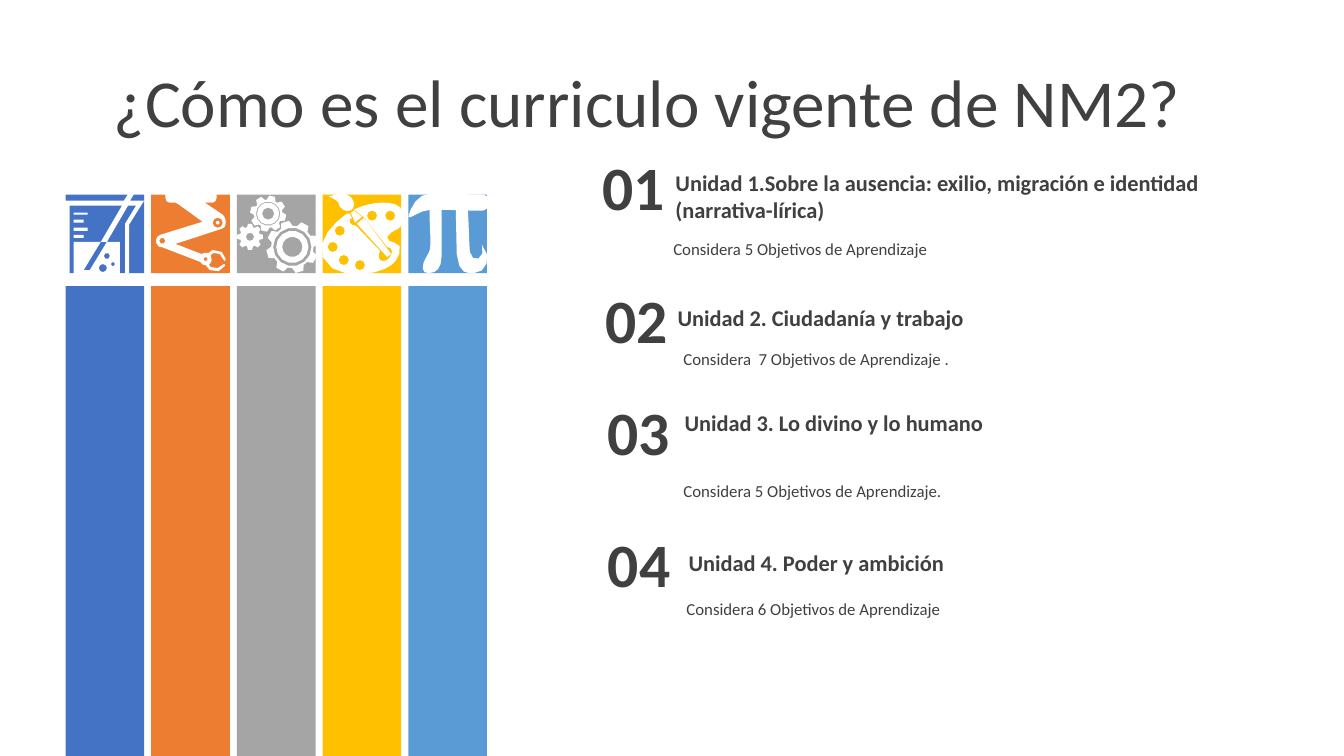
import math
import pptx
import pptx.util
import pptx.dml.color
import pptx.enum.shapes
import pptx.enum.text

PX = 9144  # EMU in one px: 100 px to the inch
FONT = "Calibri"
HUES = {"blue": "4472C4", "orange": "ED7D31", "gray": "A5A5A5",
        "gold": "FFC000", "sky": "5B9BD5", "white": "FFFFFF", "ink": "404040"}
BARS = ["blue", "orange", "gray", "gold", "sky"]

# Number, heading and note of each unit, each with its box in px
UNITS = [
    (("01", (576, 143, 105, 105)),
     ("Unidad 1.Sobre la ausencia: exilio, migración e identidad (narrativa-lírica)",
      (658, 163, 567, 64)),
     ("Considera 5 Objetivos de Aprendizaje", (658, 232, 480, 30))),
    (("02", (579, 275, 105, 84)),
     ("Unidad 2. Ciudadanía y trabajo", (660, 297, 575, 37)),
     ("Considera  7 Objetivos de Aprendizaje .", (668, 341, 493, 30))),
    (("03", (581, 386, 105, 84)),
     ("Unidad 3. Lo divino y lo humano", (667, 401, 558, 37)),
     ("Considera 5 Objetivos de Aprendizaje.", (668, 472, 493, 30))),
    (("04", (581, 517, 106, 84)),
     ("Unidad 4. Poder y ambición", (671, 540, 585, 37)),
     ("Considera 6 Objetivos de Aprendizaje", (671, 589, 493, 30))),
]

# Icon outlines in px: M starts a loop, L draws lines, C draws curves
BEAKER = """M 73 240 L 100 240 83 268 89 268 106 240 119 240 119 273 73 273
M 73 233 L 83 233 83 236 73 236 M 73 226 L 87 226 87 229 73 229
M 73 218 L 83 218 83 221 73 221 M 73 211 L 87 211 87 213 73 213
M 113 204 L 69 204 69 277 124 277 124 222 135 204 127 204 106 240 100 240 121 204
M 137 176 L 143 176 129 199 143 199 128 223 128 282 64 282 64 199 123 199"""
ARM = """M 173 192 L 215 192 215 196 C 215 199 213 201 211 201 L 203 201 221 213
C 224 216 225 221 223 225 222 226 221 226 220 227 L 174 242 200 252 202 251
C 203 251 204 251 205 251 L 207 251 211 248 220 250 224 257 223 259 222 258 218 252
212 251 209 253 210 258 C 210 259 209 261 208 262 L 207 262 209 265 216 266 222 262
223 262 223 264 217 269 208 268 204 263 203 263 C 201 263 200 262 199 260
L 160 245 158 245 C 157 244 156 243 155 241 154 237 156 234 159 233
L 201 220 176 202 174 201 168 201 C 166 201 164 199 164 196 L 164 192"""
PALETTE = """M 361 216 L 388 252 384 255 354 222 M 351 209 L 359 215 352 221 348 211
M 380 201 C 389 201 397 203 400 210 408 228 385 228 384 235 382 243 402 237 396 252
392 262 386 266 372 270 359 274 328 275 320 255 314 238 331 221 344 212
L 347 212 349 216 C 347 217 346 219 347 221 348 223 351 224 353 224 L 354 225 377 249
C 375 252 375 256 377 258 379 260 384 259 386 256 389 253 390 248 387 246
386 245 385 245 384 245 L 363 218 363 217 351 208 C 359 204 370 201 380 201
M 339 192 C 341 192 342 192 343 193 348 194 351 199 351 202 351 206 350 208 347 209
344 210 340 209 337 205 335 199 335 199 326 195 333 193 337 192 339 192"""
PI_TOP = """M 484 198 L 484 204 C 484 206 482 209 479 209 455 209 449 208 428 208
416 208 405 219 405 215 407 206 414 192 427 192 L 479 193 C 482 193 484 195 484 198"""
PI_LEFT = """M 425 271 C 420 271 418 268 420 261 423 253 427 251 427 242
427 231 426 223 426 207 L 438 207 438 254 C 438 266 433 271 425 271"""
PI_RIGHT = """M 470 271 C 464 271 455 273 453 252 L 452 207 464 207
C 465 221 465 236 466 250 468 263 483 256 478 243 489 255 482 271 470 271"""

# Paint wells, arm joints and drops as centre and radius
WELLS = [(357, 263), (341, 258), (330, 245), (337, 229), (369, 214), (387, 214)]
JOINTS = [(204, 257, 2), (161, 239, 3), (216, 221, 2), (216, 221, 5)]
DROPS = [(102, 266, 4), (112, 262, 2), (106, 254, 3)]
# Gears: centre, tip radius, root radius, half tooth, first angle, ring radii
GEARS = [(290, 245, 26, 21, 4, 164, (10, 16, 19)),
         (266, 212, 18, 14, 3, 148, (6, 11, 12)),
         (248, 235, 13, 10, 2, 180, (4,))]


def tint(hue):
    return pptx.dml.color.RGBColor.from_string(HUES[hue])


def paint(shape, hue):
    shape.shadow.inherit = False
    shape.fill.solid()
    shape.fill.fore_color.rgb = tint(hue)
    shape.line.fill.background()


def write(shape, text, size, bold=False, align="LEFT", anchor="TOP", pad=10):
    frame = shape.text_frame
    frame.word_wrap = True
    frame.auto_size = pptx.enum.text.MSO_AUTO_SIZE.NONE
    frame.vertical_anchor = getattr(pptx.enum.text.MSO_ANCHOR, anchor)
    frame.margin_left = frame.margin_right = pad * PX
    frame.margin_top = frame.margin_bottom = 5 * PX
    para = frame.paragraphs[0]
    para.alignment = getattr(pptx.enum.text.PP_ALIGN, align)
    run = para.add_run()
    run.text = text
    run.font.name = FONT
    run.font.size = pptx.util.Pt(size)
    run.font.bold = bold
    run.font.color.rgb = tint("ink")


def label(slide, box, text, size, **look):
    write(slide.shapes.add_textbox(*(n * PX for n in box)), text, size, **look)


def block(slide, box, hue):
    kind = pptx.enum.shapes.MSO_SHAPE.RECTANGLE
    paint(slide.shapes.add_shape(kind, *(n * PX for n in box)), hue)


def curve(ends):
    """Points of a cubic curve after its first end, more on a longer one."""
    steps = min(4, 1 + int(math.dist(ends[0], ends[3]) / 4))
    for step in range(1, steps + 1):
        t = step / steps
        part = [(1 - t) ** 3, 3 * t * (1 - t) ** 2, 3 * t * t * (1 - t), t ** 3]
        yield tuple(sum(w * p[axis] for w, p in zip(part, ends)) for axis in (0, 1))


def trace(text):
    """Turn an outline text into loops of points."""
    loops, mode, nums, ends = [], "M", [], []
    for word in text.split():
        if word in "MLC":
            mode = word
            continue
        nums.append(int(word))
        if len(nums) < 2:
            continue
        spot, nums = tuple(nums), []
        if mode == "M":
            loops.append([spot])
        elif mode == "L":
            loops[-1].append(spot)
        else:
            ends.append(spot)
            if len(ends) == 3:
                loops[-1].extend(curve([loops[-1][-1]] + ends))
                ends = []
    return loops


def polar(x, y, far, turn):
    return x + far * math.cos(turn), y + far * math.sin(turn)


def ring(x, y, far):
    count = 6 if far < 4 else 8 if far < 9 else 14
    return [polar(x, y, far, math.tau * i / count) for i in range(count)]


def gear(x, y, tip, root, half, first, rings):
    rim = []
    for tooth in range(8):
        mid = math.radians(first + 45 * tooth)
        for far, wide in ((root, -1.5 * half), (tip, -half), (tip, half), (root, 1.5 * half)):
            rim.append(polar(x, y, far, mid + wide / far))
    return [rim] + [ring(x, y, far) for far in rings]


def icon(slide, loops):
    pen = None
    for loop in loops:
        spots = [(round(x * PX), round(y * PX)) for x, y in loop]
        if pen is None:
            pen = slide.shapes.build_freeform(*spots[0], scale=1)
        else:
            pen.move_to(*spots[0])
        pen.add_line_segments(spots[1:], close=True)
    paint(pen.convert_to_shape(), "white")


def main():
    deck = pptx.Presentation()
    deck.slide_width, deck.slide_height = 1333 * PX, 750 * PX
    slide = deck.slides.add_slide(deck.slide_layouts[5])

    # Title
    title = slide.shapes.title
    title.left, title.top, title.width, title.height = (n * PX for n in (103, 54, 1131, 91))
    write(title, "¿Cómo es el curriculo vigente de NM2?", 48, anchor="MIDDLE")

    # Units
    for (num, spot), (head, band), (note, base) in UNITS:
        label(slide, base, note, 12)
        label(slide, band, head, 16, bold=True, pad=12)
        label(slide, spot, num, 44, bold=True, align="CENTER", pad=12)

    # Tiles with their icons
    for i, hue in enumerate(BARS):
        block(slide, (65 + 85 * i, 193, 78, 78), hue)
    icon(slide, trace(ARM) + [ring(*joint) for joint in JOINTS])
    icon(slide, trace(PALETTE) + [ring(x, y, 5) for x, y in WELLS])
    for part in (PI_TOP, PI_LEFT, PI_RIGHT):
        icon(slide, trace(part))
    icon(slide, trace(BEAKER) + [ring(*drop) for drop in DROPS])
    icon(slide, [loop for wheel in GEARS for loop in gear(*wheel)])

    # Long bars
    for i, hue in enumerate(BARS):
        block(slide, (65 + 85 * i, 284, 78, 466), hue)

    deck.save("out.pptx")


if __name__ == "__main__":
    main()
